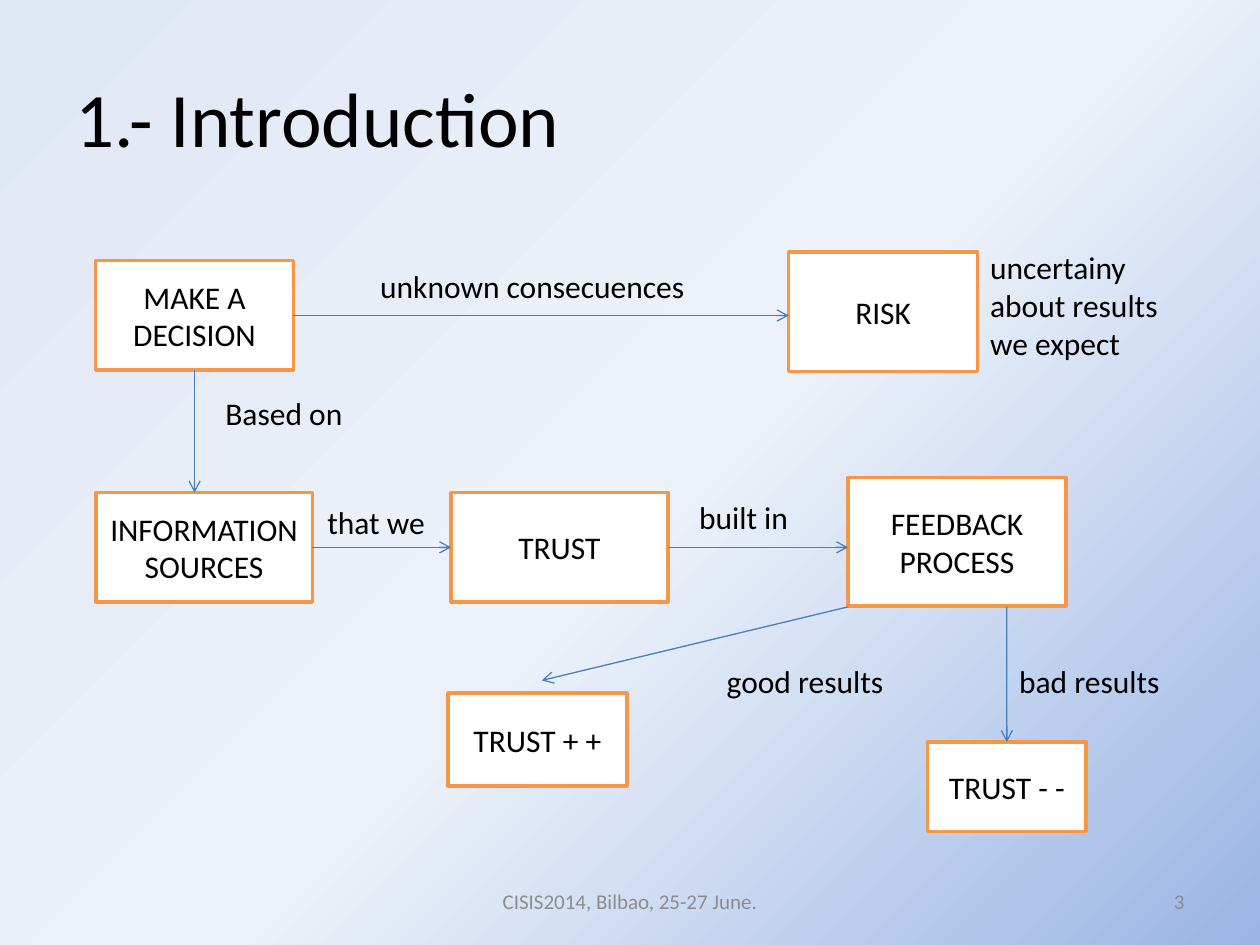
from dataclasses import dataclass
from typing import Optional

from lxml.etree import SubElement
from pptx import Presentation
from pptx.dml.color import RGBColor
from pptx.enum.shapes import MSO_CONNECTOR, MSO_SHAPE
from pptx.enum.text import MSO_ANCHOR, PP_ALIGN
from pptx.oxml import parse_xml
from pptx.oxml.ns import nsdecls, qn
from pptx.util import Pt


@dataclass(frozen=True)
class Theme:
    font: str = "Calibri"
    text: str = "000000"
    muted: str = "8C8C8C"
    box_fill: str = "FFFFFF"
    box_line: str = "F79646"
    arrow: str = "4B7EBC"
    background: tuple = ((0, "9AB5E4"), (47, "EDF2FA"), (100, "E1E8F5"))
    title_size: float = 44
    body_size: float = 18
    footer_size: float = 12
    box_width: float = 2
    arrow_width: float = 0.75


@dataclass(frozen=True)
class Area:
    left: float
    top: float
    width: float
    height: float

    def lengths(self) -> tuple:
        return Pt(self.left), Pt(self.top), Pt(self.width), Pt(self.height)


@dataclass(frozen=True)
class Box:
    text: str
    area: Area


@dataclass(frozen=True)
class Label:
    lines: tuple
    area: Area
    align: PP_ALIGN = PP_ALIGN.LEFT
    anchor: MSO_ANCHOR = MSO_ANCHOR.TOP
    size: float = Theme.body_size
    color: str = Theme.text


@dataclass(frozen=True)
class Arrow:
    start: tuple
    end: tuple
    source: Optional[str] = None
    source_side: int = 3
    target: Optional[str] = None
    target_side: int = 1


THEME = Theme()

BOXES = (
    Box("MAKE A DECISION", Area(54.7, 149, 113, 62.6)),
    Box("RISK", Area(450.7, 144, 108, 68.4)),
    Box("INFORMATION SOURCES", Area(54.7, 281.5, 123.8, 62.6)),
    Box("TRUST", Area(257.8, 281.5, 123.8, 62.6)),
    Box("FEEDBACK PROCESS", Area(484.6, 272.9, 124.6, 73.6)),
    Box("TRUST + +", Area(256, 396, 102.2, 53.3)),
    Box("TRUST - -", Area(530, 424, 90.7, 51.1)),
)

LABELS = (
    Label(("uncertainy about results", "we expect"), Area(558.7, 138.3, 124.6, 72.7)),
    Label(("unknown consecuences",), Area(210.2, 149, 198.7, 29)),
    Label(("Based on",), Area(121.7, 221.8, 95, 29)),
    Label(("that we",), Area(180, 283.7, 77, 29)),
    Label(("built in",), Area(392.4, 281, 71.3, 29)),
    Label(("good results",), Area(408.2, 374.8, 108, 29)),
    Label(("bad results",), Area(575.3, 374.8, 108, 29)),
    Label(("CISIS2014, Bilbao, 25-27 June.",), Area(246, 500.5, 228, 28.8),
          PP_ALIGN.CENTER, MSO_ANCHOR.MIDDLE, THEME.footer_size, THEME.muted),
    Label(("3",), Area(516, 500.5, 168, 28.8),
          PP_ALIGN.RIGHT, MSO_ANCHOR.MIDDLE, THEME.footer_size, THEME.muted),
)

ARROWS = (
    Arrow((167.7, 180.3), (450.7, 180.3), source="MAKE A DECISION"),
    Arrow((111.2, 211.6), (111.2, 281.5), source="MAKE A DECISION", source_side=2),
    Arrow((178.5, 312.8), (257.8, 312.8), source="INFORMATION SOURCES", target="TRUST"),
    Arrow((381.6, 312.8), (484.6, 312.8), source="TRUST"),
    Arrow((484.6, 346.8), (309.6, 388.8)),
    Arrow((575.3, 346.8), (575.3, 424), target="TRUST - -", target_side=0),
)


def write_text(frame, *lines: str, size: float, color: str = THEME.text,
               align=PP_ALIGN.LEFT, anchor=MSO_ANCHOR.MIDDLE) -> None:
    frame.word_wrap = True
    frame.vertical_anchor = anchor
    for index, line in enumerate(lines):
        paragraph = frame.add_paragraph() if index else frame.paragraphs[0]
        paragraph.alignment = align
        run = paragraph.add_run()
        run.text = line
        run.font.name = THEME.font
        run.font.size = Pt(size)
        run.font.color.rgb = RGBColor.from_string(color)


def paint_background(slide) -> None:
    """Radial gradient that starts in the lower right corner."""
    slide.background.fill.gradient()
    stops = "".join(f'<a:gs pos="{position * 1000}"><a:srgbClr val="{color}"/></a:gs>'
                    for position, color in THEME.background)
    gradient = parse_xml(
        f'<a:gradFill {nsdecls("a")} rotWithShape="1"><a:gsLst>{stops}</a:gsLst>'
        '<a:path path="circle"><a:fillToRect l="100000" t="100000"/></a:path>'
        '<a:tileRect r="-100000" b="-100000"/></a:gradFill>')
    current = next(slide.element.iter(qn("a:gradFill")))
    current.getparent().replace(current, gradient)


def draw_box(slide, box: Box):
    shape = slide.shapes.add_shape(MSO_SHAPE.RECTANGLE, *box.area.lengths())
    shape.shadow.inherit = False
    shape.fill.solid()
    shape.fill.fore_color.rgb = RGBColor.from_string(THEME.box_fill)
    shape.line.color.rgb = RGBColor.from_string(THEME.box_line)
    shape.line.width = Pt(THEME.box_width)
    write_text(shape.text_frame, box.text, size=THEME.body_size, align=PP_ALIGN.CENTER)
    return shape


def draw_label(slide, label: Label) -> None:
    shape = slide.shapes.add_textbox(*label.area.lengths())
    write_text(shape.text_frame, *label.lines, size=label.size, color=label.color,
               align=label.align, anchor=label.anchor)


def draw_arrow(slide, arrow: Arrow, boxes: dict) -> None:
    points = [Pt(value) for value in arrow.start + arrow.end]
    connector = slide.shapes.add_connector(MSO_CONNECTOR.STRAIGHT, *points)
    if arrow.source:
        connector.begin_connect(boxes[arrow.source], arrow.source_side)
    if arrow.target:
        connector.end_connect(boxes[arrow.target], arrow.target_side)
    connector.line.color.rgb = RGBColor.from_string(THEME.arrow)
    connector.line.width = Pt(THEME.arrow_width)
    properties = connector.element.spPr
    SubElement(properties.find(qn("a:ln")), qn("a:tailEnd"), type="arrow")
    SubElement(properties, qn("a:effectLst"))


def main() -> None:
    presentation = Presentation()
    presentation.slide_width, presentation.slide_height = Pt(720), Pt(540)
    slide = presentation.slides.add_slide(presentation.slide_layouts.get_by_name("Title Only"))
    paint_background(slide)

    # Title
    title = slide.shapes.title
    title.left, title.top, title.width, title.height = Area(36, 21.6, 648, 90).lengths()
    write_text(title.text_frame, "1.- Introduction", size=THEME.title_size)

    # Flow diagram, captions and footer
    boxes = {box.text: draw_box(slide, box) for box in BOXES}
    for arrow in ARROWS:
        draw_arrow(slide, arrow, boxes)
    for label in LABELS:
        draw_label(slide, label)

    presentation.save("out.pptx")


if __name__ == "__main__":
    main()
